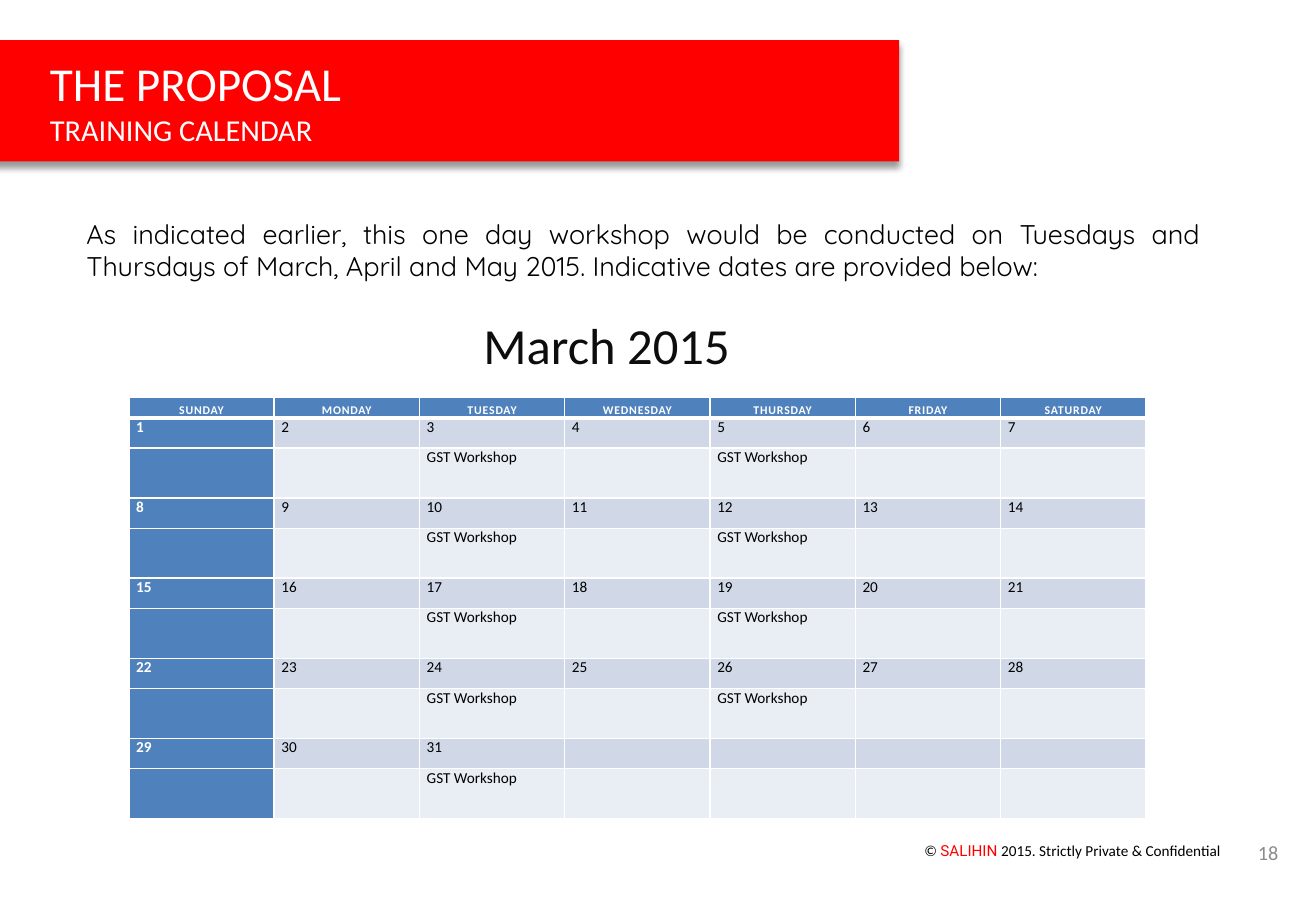
from dataclasses import dataclass

from lxml import etree
from pptx import Presentation
from pptx.dml.color import RGBColor
from pptx.enum.text import MSO_ANCHOR, MSO_AUTO_SIZE, PP_ALIGN
from pptx.oxml.ns import qn
from pptx.util import Inches, Pt

LEFT, CENTER, RIGHT, JUSTIFY = PP_ALIGN.LEFT, PP_ALIGN.CENTER, PP_ALIGN.RIGHT, PP_ALIGN.JUSTIFY
TOP, MIDDLE, BOTTOM = MSO_ANCHOR.TOP, MSO_ANCHOR.MIDDLE, MSO_ANCHOR.BOTTOM
FIXED = MSO_AUTO_SIZE.NONE
TITLE_AND_CONTENT = 1


@dataclass(frozen=True)
class Theme:
    red: str = "FF0000"
    white: str = "FFFFFF"
    black: str = "000000"
    ink: str = "0D0D0D"
    gray: str = "8C8C8C"
    blue: str = "4F81BD"
    date_band: str = "D0D8E8"
    event_band: str = "E9EDF4"
    main_font: str = "Calibri"
    intro_font: str = "Quicksand"
    name_font: str = "Roboto"
    title: int = 28
    subtitle: int = 18
    month: int = 30
    intro: int = 16
    number: int = 12
    small: int = 9
    weekday: int = 7


def add_element(parent, tag, **attributes):
    return etree.SubElement(parent, qn(tag), attributes)


class SlideBuilder:
    """Places elements by percent of the slide's width and height."""

    def __init__(self, presentation, theme):
        self.theme = theme
        self.width, self.height = presentation.slide_width, presentation.slide_height
        layout = presentation.slide_layouts[TITLE_AND_CONTENT]
        self.slide = presentation.slides.add_slide(layout)

    def across(self, percent):
        return round(self.width * percent / 100)

    def down(self, percent):
        return round(self.height * percent / 100)

    def box(self, left, top, width, height):
        return self.across(left), self.down(top), self.across(width), self.down(height)

    def place(self, shape, box):
        for name, length in zip(("left", "top", "width", "height"), self.box(*box)):
            setattr(shape, name, length)

    def frame(self, shape, anchor):
        settings = {"word_wrap": True, "auto_size": FIXED, "vertical_anchor": anchor}
        for name, value in settings.items():
            setattr(shape.text_frame, name, value)
        return shape.text_frame

    def add_text(self, paragraph, text, size, color, font=None, **extra):
        run = paragraph.add_run()
        run.text = text
        settings = {"size": Pt(size), "name": font or self.theme.main_font, **extra}
        for name, value in settings.items():
            setattr(run.font, name, value)
        run.font.color.rgb = RGBColor.from_string(color)
        return run

    def banner(self, box, lines):
        title = self.slide.shapes.title
        self.place(title, box)
        title.fill.solid()
        title.fill.fore_color.rgb = RGBColor.from_string(self.theme.red)
        effects = add_element(title.element.spPr, "a:effectLst")
        shadow = add_element(effects, "a:outerShdw", blurRad=str(Pt(4)), dist=str(Pt(3)),
                             dir="5400000", algn="t", rotWithShape="0")
        color = add_element(shadow, "a:srgbClr", val=self.theme.black)
        add_element(color, "a:alpha", val="40000")
        frame = self.frame(title, MIDDLE)
        for index, (text, size) in enumerate(lines):
            paragraph = frame.add_paragraph() if index else frame.paragraphs[0]
            paragraph.alignment = LEFT
            paragraph._p.get_or_add_pPr().set("indent", str(Inches(0.58)))
            self.add_text(paragraph, text, size, self.theme.white)

    def introduction(self, box, text):
        body = self.slide.placeholders[1]
        self.place(body, box)
        paragraph = self.frame(body, TOP).paragraphs[0]
        properties = paragraph._p.get_or_add_pPr()
        properties.set("marL", "0")
        properties.set("indent", "0")
        add_element(properties, "a:buNone")
        paragraph.alignment = JUSTIFY
        paragraph.space_before = Pt(0)
        self.add_text(paragraph, text, self.theme.intro, self.theme.black, self.theme.intro_font)

    def label(self, box, runs, size, align=LEFT, anchor=TOP):
        shape = self.slide.shapes.add_textbox(*self.box(*box))
        paragraph = self.frame(shape, anchor).paragraphs[0]
        paragraph.alignment = align
        for text, color, font in runs:
            self.add_text(paragraph, text, size, color, font)

    def cell(self, cell, text, fill, size, color, bold, borders, align=LEFT, anchor=TOP, spacing=0):
        margin = Inches(0.06)
        settings = {"margin_left": margin, "margin_right": margin, "margin_top": 0,
                    "margin_bottom": 0, "vertical_anchor": anchor}
        for name, value in settings.items():
            setattr(cell, name, value)
        properties = cell._tc.get_or_add_tcPr()
        for side in "LRTB":
            line = add_element(properties, f"a:ln{side}", w=str(Pt(borders.get(side, 1))))
            add_element(add_element(line, "a:solidFill"), "a:srgbClr", val=self.theme.white)
        cell.fill.solid()
        cell.fill.fore_color.rgb = RGBColor.from_string(fill)
        paragraph = cell.text_frame.paragraphs[0]
        if text:
            paragraph.alignment = align
            paragraph.space_after = Pt(2)
            run = self.add_text(paragraph, text, size, color, bold=bold)
            run._r.get_or_add_rPr().set("spc", str(spacing))
        else:
            add_element(paragraph._p, "a:endParaRPr", sz=str(size * 100))

    def calendar(self, box, weekdays, days, events, heights):
        theme = self.theme
        weeks = -(-days // len(weekdays))
        graphic = self.slide.shapes.add_table(1 + 2 * weeks, len(weekdays), *self.box(*box))
        table = graphic.table
        table.horz_banding = False
        header_height, date_height, event_height = heights
        for row, height in zip(table.rows, [header_height] + [date_height, event_height] * weeks):
            row.height = self.down(height)

        for column, weekday in enumerate(weekdays):
            self.cell(table.cell(0, column), weekday, theme.blue, theme.weekday, theme.white,
                      True, {"B": 3}, CENTER, BOTTOM, spacing=50)
            first = column == 0
            color = theme.white if first else theme.black
            for week in range(weeks):
                day = week * len(weekdays) + column + 1
                date = str(day) if day <= days else ""
                event = events.get(weekday, "") if date else ""
                row = 1 + 2 * week
                for offset, text, band in ((0, date, theme.date_band), (1, event, theme.event_band)):
                    borders = {"T": 3} if row + offset == 1 else {}
                    self.cell(table.cell(row + offset, column), text,
                              theme.blue if first else band, theme.small, color, first, borders)


def main():
    theme = Theme()
    presentation = Presentation()
    presentation.slide_width, presentation.slide_height = Inches(10.83), Inches(7.5)
    builder = SlideBuilder(presentation, theme)

    # Title banner and introduction
    builder.banner((-2.49, 4.4, 70.82, 13.33),
                   [("THE PROPOSAL", theme.title), ("TRAINING CALENDAR", theme.subtitle)])
    builder.introduction(
        (5.63, 23.2, 86.52, 8.53),
        "As indicated earlier, this one day workshop would be conducted on Tuesdays and "
        "Thursdays of March, April and May 2015. Indicative dates are provided below:")

    # Month and its calendar
    builder.label((35.83, 33.73, 26.13, 8.13), [("March 2015", theme.ink, theme.main_font)],
                  theme.month, anchor=MIDDLE)
    weekdays = ["SUNDAY", "MONDAY", "TUESDAY", "WEDNESDAY", "THURSDAY", "FRIDAY", "SATURDAY"]
    events = dict.fromkeys(("TUESDAY", "THURSDAY"), "GST Workshop")
    builder.calendar((9.79, 43.6, 77.29, 46.27), weekdays, 31, events, (2.27, 3.33, 5.47))

    # Footer
    builder.label((66.76, 91.73, 26.87, 3.33),
                  [("© ", theme.black, theme.main_font),
                   ("SALIHIN ", theme.red, theme.name_font),
                   ("2015. Strictly Private & Confidential", theme.black, theme.main_font)],
                  theme.small, RIGHT)
    builder.label((94.37, 90.93, 3.69, 5.33), [("18", theme.gray, theme.main_font)],
                  theme.number, RIGHT, MIDDLE)

    presentation.save("out.pptx")


if __name__ == "__main__":
    main()
